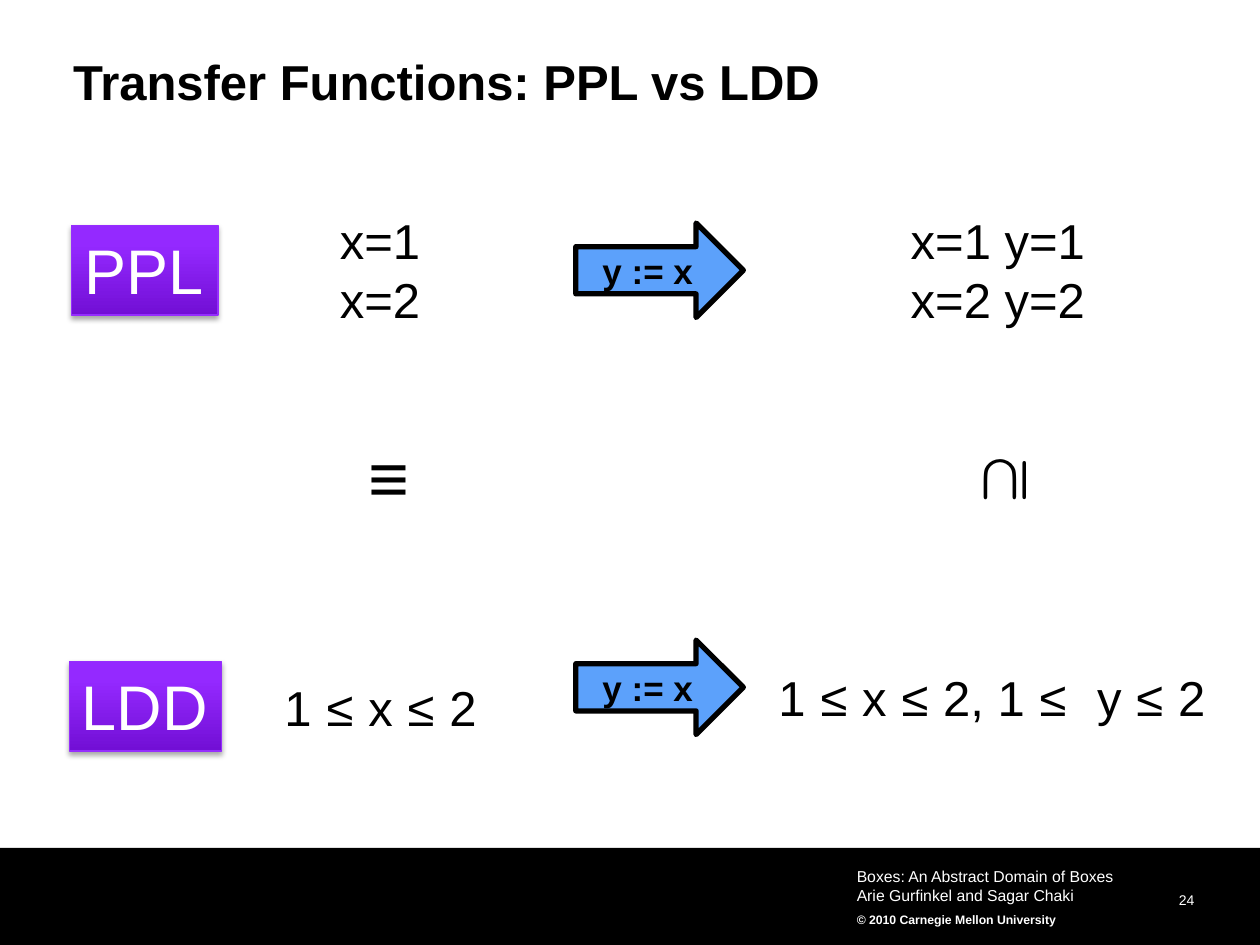
from copy import deepcopy

from pptx import Presentation
from pptx.dml.color import RGBColor
from pptx.enum.shapes import MSO_SHAPE
from pptx.enum.text import MSO_ANCHOR as Anchor, MSO_AUTO_SIZE as AutoSize, PP_ALIGN as Align
from pptx.oxml import parse_xml
from pptx.oxml.ns import nsdecls, qn
from pptx.util import Inches, Pt

BLACK = RGBColor(0x00, 0x00, 0x00)
WHITE = RGBColor(0xFF, 0xFF, 0xFF)
ARROW_BLUE = RGBColor(0x5C, 0xA1, 0xFB)
BADGE_LINE = RGBColor(0x96, 0x2D, 0xFE)
BADGE_STOPS = [
    (0, RGBColor(0x72, 0x0F, 0xD5)),
    (0.8, RGBColor(0x94, 0x29, 0xFF)),
    (1, RGBColor(0x95, 0x2B, 0xFF)),
]
BODY, SYMBOL = "Arial", "Courier New"
LEQ = "≤"
BADGE_SHADOW = f"""<a:outerShdw {nsdecls('a')} blurRad="39370" dist="22860" dir="5400000"
  rotWithShape="0"><a:srgbClr val="000000"><a:alpha val="35000"/></a:srgbClr></a:outerShdw>"""


def set_font(font, size, color=BLACK, bold=False, name=BODY):
    font.name, font.size, font.bold = name, Pt(size), bold
    font.color.rgb = color


def set_frame(frame, inset=None, wrap=False, anchor=Anchor.TOP, grow=True):
    frame.word_wrap = wrap
    frame.vertical_anchor = anchor
    frame.auto_size = AutoSize.SHAPE_TO_FIT_TEXT if grow else AutoSize.NONE
    if inset is not None:
        frame.margin_left = frame.margin_right = Inches(inset)
        frame.margin_top = frame.margin_bottom = Inches(inset)


def add_text(slide, box, lines, size, color=BLACK, bold=False, name=BODY, **frame_options):
    """Add a text box with one paragraph per line and return it."""
    textbox = slide.shapes.add_textbox(*map(Inches, box))
    frame = textbox.text_frame
    set_frame(frame, **frame_options)
    for number, line in enumerate(lines):
        paragraph = frame.add_paragraph() if number else frame.paragraphs[0]
        paragraph.text = line
        set_font(paragraph.font, size, color, bold, name)
    return textbox


def add_formula(slide, box, parts):
    """Add a one-line formula whose comparison signs use the symbol font."""
    paragraph = add_text(slide, box, [""], 28).text_frame.paragraphs[0]
    for part in parts:
        run = paragraph.add_run()
        run.text = part
        run.font.name = SYMBOL if LEQ in part else BODY


def add_badge(slide, box, label):
    badge = slide.shapes.add_shape(MSO_SHAPE.RECTANGLE, *map(Inches, box))
    badge.fill.gradient()
    badge.fill.gradient_angle = 90
    properties = badge._element.spPr
    stop_list = properties.find(qn("a:gradFill")).find(qn("a:gsLst"))
    stop_list.insert(1, deepcopy(stop_list[0]))
    for stop, (position, color) in zip(badge.fill.gradient_stops, BADGE_STOPS):
        stop.position = position
        stop.color.rgb = color
    badge.line.color.rgb = BADGE_LINE
    badge.line.width = Pt(0.75)
    badge.shadow.inherit = False
    properties.find(qn("a:effectLst")).append(parse_xml(BADGE_SHADOW))

    set_frame(badge.text_frame)
    paragraph = badge.text_frame.paragraphs[0]
    paragraph.text = label
    paragraph.alignment = Align.LEFT
    set_font(paragraph.font, 36, WHITE)


def add_assignment_arrow(slide, top):
    arrow = slide.shapes.add_shape(
        MSO_SHAPE.RIGHT_ARROW, Inches(4.57), Inches(top), Inches(1.33), Inches(0.75))
    arrow.shadow.inherit = False
    arrow.fill.solid()
    arrow.fill.fore_color.rgb = ARROW_BLUE
    arrow.line.color.rgb = BLACK
    arrow.line.width = Pt(3)
    set_frame(arrow.text_frame, inset=0, anchor=Anchor.MIDDLE, grow=False)
    paragraph = arrow.text_frame.paragraphs[0]
    paragraph.text = "y := x"
    paragraph.alignment = Align.CENTER
    set_font(paragraph.font, 20, bold=True)


def add_footer(slide):
    band = slide.shapes.add_shape(
        MSO_SHAPE.RECTANGLE, 0, Inches(6.73), Inches(10), Inches(0.77))
    band.shadow.inherit = False
    band.fill.solid()
    band.fill.fore_color.rgb = BLACK
    band.line.fill.background()

    page = add_text(slide, (8.56, 7.03, 0.92, 0.18), ["24"], 8, WHITE,
                    inset=0, wrap=True, anchor=Anchor.MIDDLE)
    page_number = page.text_frame.paragraphs[0]
    page_number.alignment = Align.RIGHT
    page_number.line_spacing = Pt(13)

    credits = add_text(
        slide, (6.75, 6.83, 2.5, 0.58),
        ["Boxes: An Abstract Domain of Boxes", "Arie Gurfinkel and Sagar Chaki",
         "© 2010 Carnegie Mellon University"],
        9, WHITE, inset=0.05, wrap=True, anchor=Anchor.MIDDLE)
    copyright_line = credits.text_frame.paragraphs[-1]
    copyright_line.line_spacing = 1.5
    set_font(copyright_line.font, 7, WHITE, bold=True)


def main():
    deck = Presentation()
    deck.slide_width, deck.slide_height = Inches(10), Inches(7.5)
    slide = deck.slides.add_slide(deck.slide_layouts[6])

    add_footer(slide)
    title = add_text(slide, (0.58, 0.46, 8.92, 0.42), ["Transfer Functions: PPL vs LDD"],
                     28, bold=True, inset=0, wrap=True)
    title.text_frame.paragraphs[0].line_spacing = 0.9

    add_badge(slide, (0.57, 1.79, 1.16, 0.71), "PPL")
    add_text(slide, (2.6, 1.62, 0.96, 1.04), ["x=1", "x=2"], 28)
    add_assignment_arrow(slide, 1.77)
    add_text(slide, (7.13, 1.62, 1.6, 1.04), ["x=1 y=1", "x=2 y=2"], 28)

    add_text(slide, (2.82, 3.39, 0.53, 0.77), ["≡"], 40, bold=True, name=SYMBOL)
    superset = add_text(slide, (7.64, 3.39, 0.58, 0.77), ["⊇"], 40, bold=True, name=SYMBOL)
    superset.rotation = 270

    add_badge(slide, (0.55, 5.25, 1.21, 0.71), "LDD")
    add_formula(slide, (2.16, 5.33, 1.84, 0.57), ["1 ", LEQ, " x ", LEQ, " 2"])
    add_assignment_arrow(slide, 5.08)
    add_formula(slide, (6.08, 5.25, 3.69, 0.57),
                ["1 ", LEQ, " x ", LEQ, " 2, 1 ", LEQ + " ", "y ", LEQ, " 2"])

    deck.save("out.pptx")


if __name__ == "__main__":
    main()
